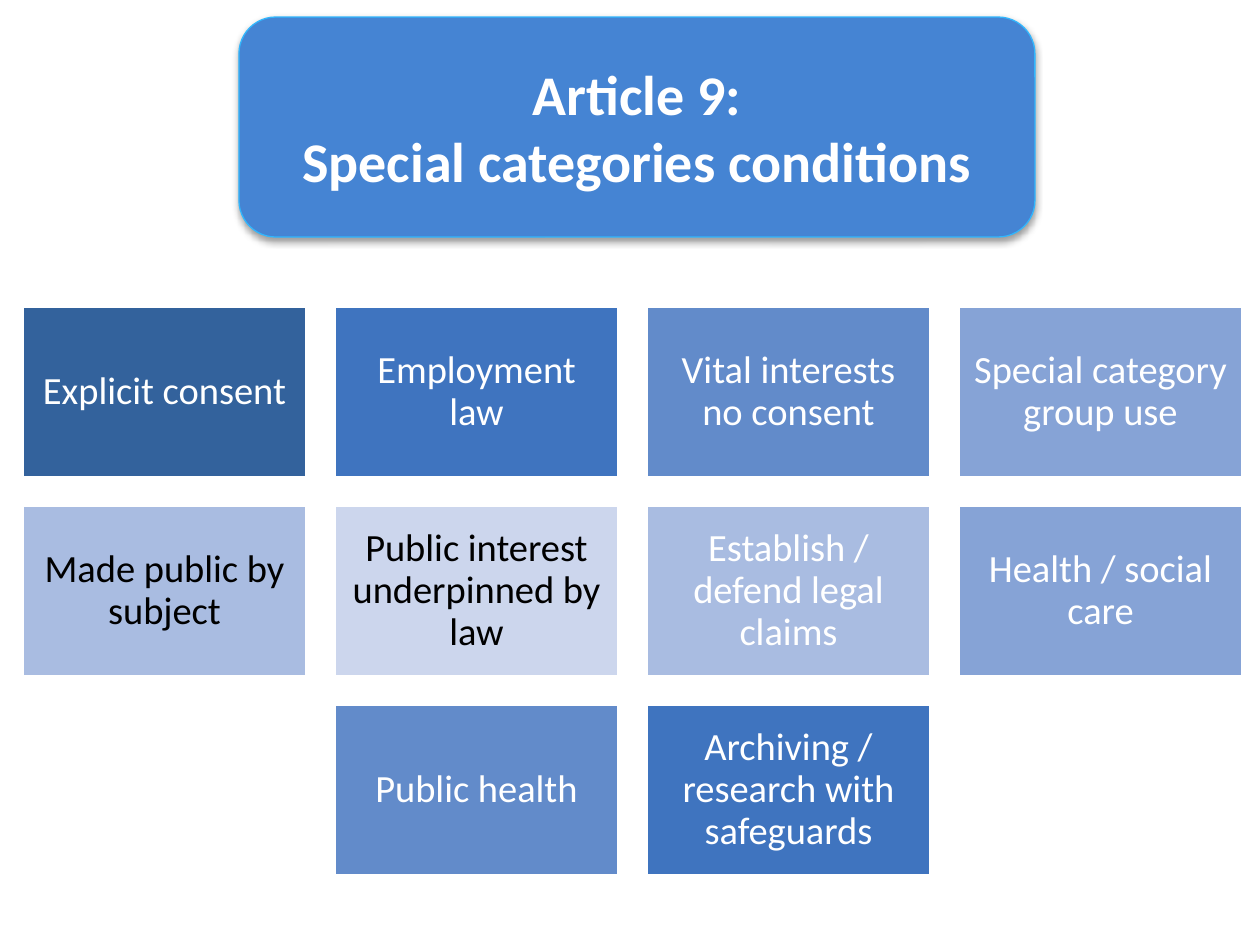
from lxml import etree
from pptx import Presentation
from pptx.dml.color import RGBColor
from pptx.enum.shapes import MSO_SHAPE
from pptx.enum.text import MSO_ANCHOR, PP_ALIGN
from pptx.oxml import parse_xml
from pptx.oxml.ns import nsdecls, qn
from pptx.util import Pt

RECTANGLE = MSO_SHAPE.RECTANGLE
ROUNDED = MSO_SHAPE.ROUNDED_RECTANGLE
MIDDLE = MSO_ANCHOR.MIDDLE
CENTER = PP_ALIGN.CENTER

PX = 914400 / 126
COLORS = {
    "white": "FFFFFF",
    "black": "000000",
    "heading": "4584D3",
    "heading edge": "31B6FD",
    "navy": "33629C",
    "blue": "3F74BF",
    "medium": "628BCA",
    "soft": "86A3D6",
    "light": "A9BCE1",
    "pale": "CCD6ED",
}


def add_box(shapes, kind, bounds, fill, edge, edge_width):
    box = shapes.add_shape(kind, *(round(length * PX) for length in bounds))
    box.shadow.inherit = False
    box.fill.solid()
    box.fill.fore_color.rgb = RGBColor.from_string(COLORS[fill])
    box.line.color.rgb = RGBColor.from_string(COLORS[edge])
    box.line.width = Pt(edge_width)
    box.text_frame.word_wrap = True
    box.text_frame.vertical_anchor = MIDDLE
    return box


def add_text(paragraph, text, size, color, bold=False):
    paragraph.alignment = CENTER
    run = paragraph.add_run()
    run.text = text
    run.font.name = "Calibri"
    run.font.size = Pt(size)
    run.font.bold = bold
    run.font.color.rgb = RGBColor.from_string(COLORS[color])


prs = Presentation()
prs.slide_width = round(1260 * PX)
prs.slide_height = round(945 * PX)
slide = prs.slides.add_slide(prs.slide_layouts[6])

LEFT, TOP = 23, 307
TILE_W, TILE_H = 283, 170
GAP_X, GAP_Y = 29, 29
INSET = round(11 * PX)

conditions = [
    (0, 0, "Explicit consent", "navy", "white"),
    (0, 1, "Employment law", "blue", "white"),
    (0, 2, "Vital interests no consent", "medium", "white"),
    (0, 3, "Special category group use", "soft", "white"),
    (1, 0, "Made public by subject", "light", "black"),
    (1, 1, "Public interest underpinned by law", "pale", "black"),
    (1, 2, "Establish / defend legal claims", "light", "white"),
    (1, 3, "Health / social care", "soft", "white"),
    (2, 1, "Public health", "medium", "white"),
    (2, 2, "Archiving / research with safeguards", "blue", "white"),
]

grid = slide.shapes.add_group_shape()
for row, column, condition, fill, color in conditions:
    bounds = (LEFT + column * (TILE_W + GAP_X), TOP + row * (TILE_H + GAP_Y), TILE_W, TILE_H)
    tile = add_box(grid.shapes, RECTANGLE, bounds, fill, "white", 1.25)
    frame = tile.text_frame
    frame.margin_left = frame.margin_right = INSET
    frame.margin_top = frame.margin_bottom = INSET
    paragraph = frame.paragraphs[0]
    add_text(paragraph, condition, 22, color)
    paragraph.line_spacing = 0.9
    space_after = etree.SubElement(paragraph._p.get_or_add_pPr(), qn("a:spcAft"))
    etree.SubElement(space_after, qn("a:spcPct")).set("val", "35000")

heading = add_box(slide.shapes, ROUNDED, (239, 17, 796, 220), "heading", "heading edge", 0.75)
effects = heading._element.spPr.find(qn("a:effectLst"))
effects.append(parse_xml(
    f'<a:outerShdw {nsdecls("a")} blurRad="50800" dist="25400" dir="5400000" rotWithShape="0">'
    f'<a:srgbClr val="{COLORS["black"]}"><a:alpha val="38000"/></a:srgbClr></a:outerShdw>'
))
add_text(heading.text_frame.paragraphs[0], "Article 9:", 32, "white", True)
add_text(heading.text_frame.add_paragraph(), "Special categories conditions", 32, "white", True)

prs.save("out.pptx")
